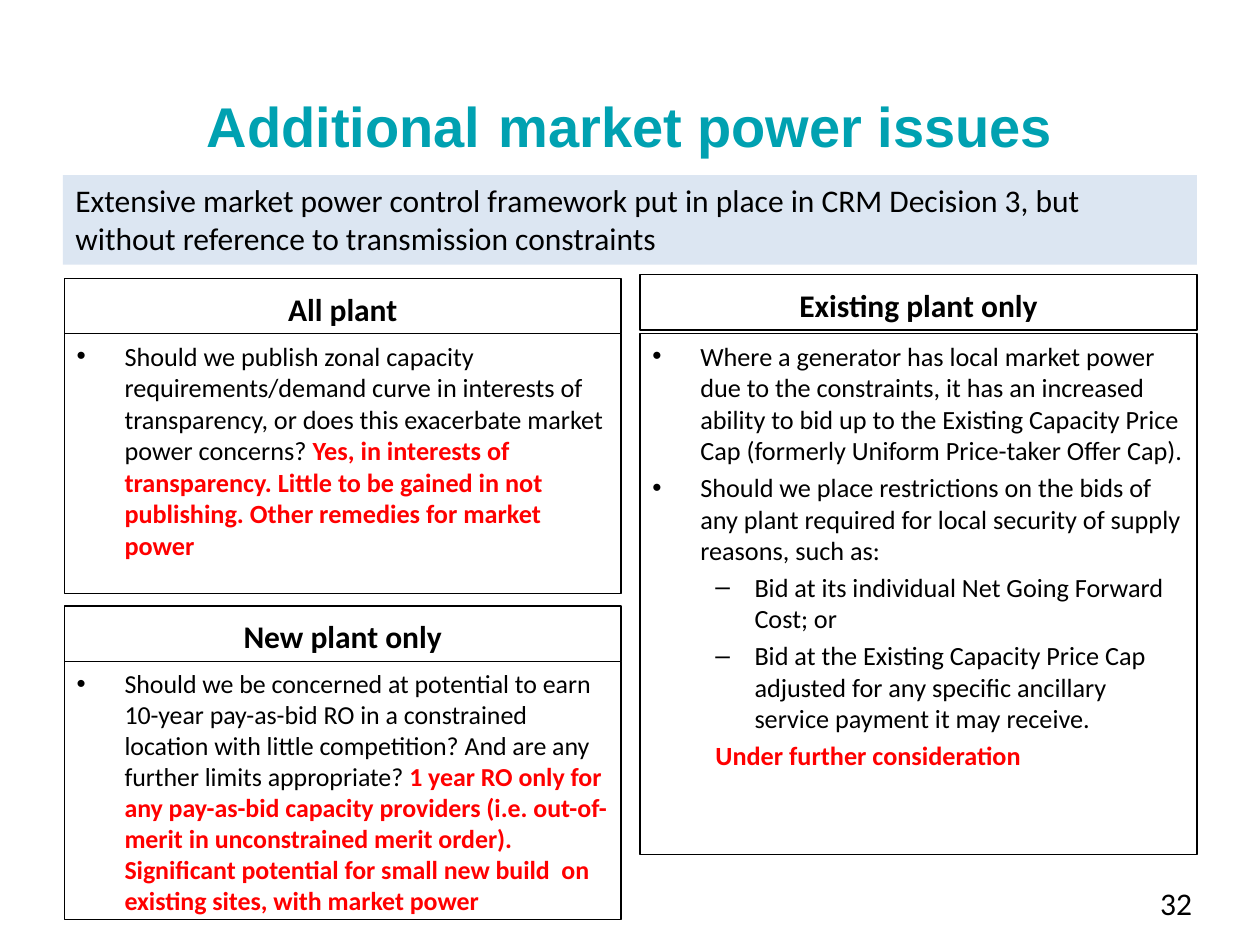
from lxml import etree
from pptx import Presentation
from pptx.dml.color import RGBColor
from pptx.enum.shapes import MSO_SHAPE
from pptx.enum.text import MSO_ANCHOR, PP_ALIGN
from pptx.oxml.ns import qn
from pptx.util import Inches, Pt

RECT = MSO_SHAPE.RECTANGLE
TOP, MIDDLE, BOTTOM = MSO_ANCHOR.TOP, MSO_ANCHOR.MIDDLE, MSO_ANCHOR.BOTTOM
LEFT, CENTER, RIGHT = PP_ALIGN.LEFT, PP_ALIGN.CENTER, PP_ALIGN.RIGHT
BLACK, RED, TEAL, PALE = "000000", "FF0000", "00A1B1", "DCE6F2"


def add_para(tf, runs, size=18, color=BLACK, bold=False, font="Calibri",
             align=LEFT, before=0, margin=0, indent=0, bullet=None):
    """Add a paragraph; each run is text or (text, overriding format)."""
    p = tf.paragraphs[0]
    if p.runs:
        p = tf.add_paragraph()
    p.alignment = align
    p.space_before = Pt(before)
    pPr = p._p.get_or_add_pPr()
    pPr.set("marL", str(Inches(margin)))
    pPr.set("indent", str(Inches(indent)))
    if bullet:
        etree.SubElement(pPr, qn("a:buFont")).set("typeface", "Arial")
        etree.SubElement(pPr, qn("a:buChar")).set("char", bullet)
    for run in [runs] if isinstance(runs, str) else runs:
        text, fmt = (run, {}) if isinstance(run, str) else run
        r = p.add_run()
        r.text = text
        r.font.name = fmt.get("font", font)
        r.font.size = Pt(fmt.get("size", size))
        r.font.bold = fmt.get("bold", bold)
        r.font.color.rgb = RGBColor.from_string(fmt.get("color", color))


def add_box(x, y, w, h, fill=None, line=None, anchor=TOP):
    """Add a rectangle and return its text frame."""
    s = sp.add_shape(RECT, Inches(x), Inches(y), Inches(w), Inches(h))
    s.shadow.inherit = False
    if fill:
        s.fill.solid()
        s.fill.fore_color.rgb = RGBColor.from_string(fill)
    else:
        s.fill.background()
    if line:
        s.line.color.rgb = RGBColor.from_string(line)
        s.line.width = Pt(0.75)
    else:
        s.line.fill.background()
    tf = s.text_frame
    tf.word_wrap = True
    tf.vertical_anchor = anchor
    return tf


prs = Presentation()
prs.slide_width, prs.slide_height = Inches(10), Inches(7.5)
sp = prs.slides.add_slide(prs.slide_layouts[6]).shapes

# Title and page number
title = {"font": "Arial", "size": 32, "color": TEAL, "bold": True}
for x, y, w, h, anchor, runs, align in [
    (0.5, 0.3, 9, 1.25, MIDDLE,
     [("Additional", title), (" ", {"size": 44}), ("market power issues", title)], CENTER),
    (8.62, 6.97, 0.94, 0.4, TOP, "32", RIGHT),
]:
    tf = sp.add_textbox(Inches(x), Inches(y), Inches(w), Inches(h)).text_frame
    tf.word_wrap = True
    tf.vertical_anchor = anchor
    add_para(tf, runs, align=align)

# Summary band
tf = add_box(0.5, 1.39, 9, 0.71, fill=PALE)
add_para(tf, "Extensive market power control framework put in place in CRM Decision 3, "
             "but without reference to transmission constraints")

# Headed panels: x, heading top, body top, body height, text size, paragraphs
answer = {"color": RED, "bold": True}
point = {"margin": 0.38, "indent": -0.38, "bullet": "•"}
option = {"margin": 0.81, "indent": -0.31, "bullet": "–"}
panels = [
    ("All plant", 0.51, 2.21, 2.65, 2.06, 15, [
        (["Should we publish zonal capacity requirements/demand curve in interests of "
          "transparency, or does this exacerbate market power concerns? ",
          ("Yes, in interests of transparency. Little to be gained in not publishing. "
           "Other remedies for market power", answer)], point),
    ]),
    ("New plant only", 0.51, 4.81, 5.25, 2.05, 14.8, [
        (["Should we be concerned at potential to earn 10-year pay-as-bid RO in a "
          "constrained location with little competition? And are any further limits "
          "appropriate? ",
          ("1 year RO only for any pay-as-bid capacity providers (i.e. out-of-merit in "
           "unconstrained merit order). Significant potential for small new build  on "
           "existing sites, with market power", answer)], point),
    ]),
    ("Existing plant only", 5.08, 2.18, 2.65, 4.13, 15, [
        ("Where a generator has local market power due to the constraints, it has an "
         "increased ability to bid up to the Existing Capacity Price Cap (formerly "
         "Uniform Price-taker Offer Cap).", point),
        ("Should we place restrictions on the bids of any plant required for local "
         "security of supply reasons, such as:", point),
        ("Bid at its individual Net Going Forward Cost; or", option),
        ("Bid at the Existing Capacity Price Cap adjusted for any specific ancillary "
         "service payment it may receive.", option),
        ("Under further consideration", {"margin": 0.5, **answer}),
    ]),
]
for heading, x, head_y, body_y, body_h, size, paras in panels:
    tf = add_box(x, head_y, 4.42, 0.44, line=BLACK, anchor=BOTTOM)
    add_para(tf, heading, bold=True, align=CENTER, before=3.6)
    tf = add_box(x, body_y, 4.42, body_h, line=BLACK)
    for runs, fmt in paras:
        add_para(tf, runs, size=size, before=3, **fmt)

prs.save("out.pptx")
